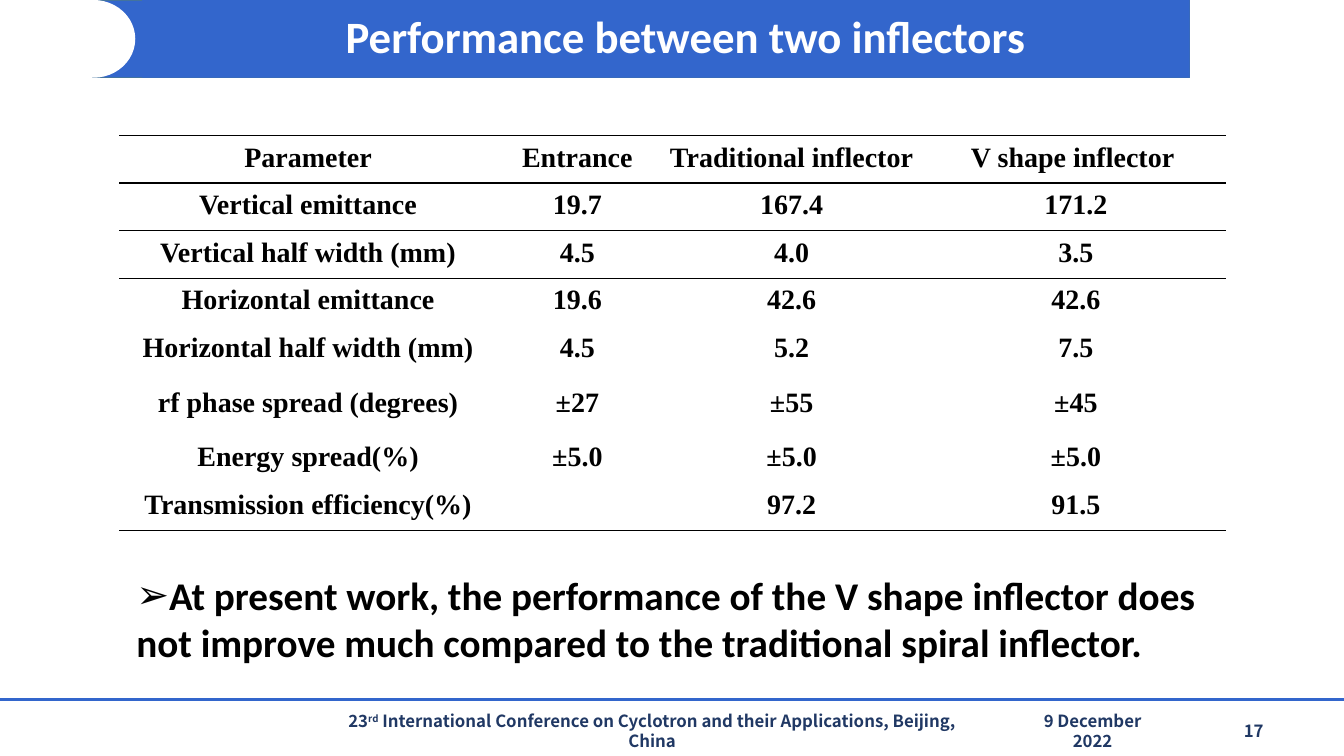
import dataclasses
import typing

import pptx
import pptx.dml.color
import pptx.enum.shapes
import pptx.enum.text
import pptx.oxml
import pptx.oxml.ns
import pptx.util
from lxml import etree

Cm = pptx.util.Cm
Pt = pptx.util.Pt
Rgb = pptx.dml.color.RGBColor
Forms = pptx.enum.shapes.MSO_SHAPE
CENTER = pptx.enum.text.PP_ALIGN.CENTER
MIDDLE = pptx.enum.text.MSO_ANCHOR.MIDDLE
qn = pptx.oxml.ns.qn


@dataclasses.dataclass(frozen=True)
class Face:
    name: str
    size: float
    color: str


@dataclasses.dataclass(frozen=True)
class Theme:
    blue: str = "3366CC"
    edge: str = "43739E"
    white: str = "FFFFFF"
    black: str = "000000"
    title: Face = Face("Calibri", 32, "FFFFFF")
    body: Face = Face("Calibri", 28, "000000")
    table: Face = Face("Times New Roman", 20, "000000")
    foot: Face = Face("Noto Sans CJK SC", 12, "203864")


class Box(typing.NamedTuple):
    left: float
    top: float
    width: float
    height: float

    def lengths(self) -> list:
        return [Cm(side) for side in self]


class Block(typing.NamedTuple):
    form: Forms
    box: Box
    fill: str
    edge: typing.Optional[str]


class Note(typing.NamedTuple):
    left: float
    width: float
    runs: tuple


THEME = Theme()
HEAD = 1.96
PLAIN = "{2D5ABB26-0587-4C30-8999-92F81FD0307C}"
BLOCKS = (
    Block(Forms.RECTANGLE, Box(2.34, 0, 27.64, HEAD), THEME.blue, THEME.edge),
    Block(Forms.OVAL, Box(1.3, 0, 2.11, HEAD), THEME.white, None),
)
# Each run is a text and its baseline shift
NOTES = (
    Note(25.53, 4.01, (("9 December 2022", 0),)),
    Note(8.28, 16.31, (
        ("23", 0), ("rd", 30000),
        (" International Conference on Cyclotron and their Applications, Beijing, China", 0),
    )),
    Note(30.45, 2.29, (("17", 0),)),
)
ROWS = (
    ("Parameter", "Entrance", "Traditional inflector", "V shape inflector "),
    ("Vertical emittance", "19.7", "167.4", "171.2"),
    ("Vertical half width (mm)", "4.5", "4.0", "3.5"),
    ("Horizontal emittance", "19.6", "42.6", "42.6"),
    ("Horizontal half width (mm)", "4.5", "5.2", "7.5"),
    ("rf phase spread (degrees)", "±27", "±55", "±45"),
    ("Energy spread(%)", "±5.0", "±5.0", "±5.0"),
    ("Transmission efficiency(%)", "", "97.2", "91.5"),
)
WIDTHS = (9.53, 4.04, 6.76, 7.57)
HEIGHTS = (2.44, 1.2, 1.2, 1.2, 1.2, 1.2, 1.55, 1.2, 1.2)
RULED = {0, 1, 2, 8}


def apply(target: typing.Any, values: dict) -> None:
    for name, value in values.items():
        setattr(target, name, value)


def style(font: typing.Any, face: Face) -> None:
    apply(font, {"name": face.name, "size": Pt(face.size), "bold": True})
    font.color.rgb = Rgb.from_string(face.color)


def place(shape: typing.Any, box: Box) -> None:
    apply(shape, dict(zip(("left", "top", "width", "height"), box.lengths())))


def paint(shape: typing.Any, color: str) -> None:
    shape.fill.solid()
    shape.fill.fore_color.rgb = Rgb.from_string(color)


def draw_block(slide: typing.Any, block: Block) -> None:
    shape = slide.shapes.add_shape(block.form, *block.box.lengths())
    shape.shadow.inherit = False
    paint(shape, block.fill)
    if block.edge:
        shape.line.color.rgb = Rgb.from_string(block.edge)
        shape.line.width = Pt(1)
    else:
        shape.line.fill.background()


def draw_rule(slide: typing.Any) -> None:
    rule = slide.shapes.add_connector(
        pptx.enum.shapes.MSO_CONNECTOR.STRAIGHT, 0, Cm(17.63), Cm(33.87), Cm(17.63))
    rule.line.color.rgb = Rgb.from_string(THEME.blue)
    rule.line.width = Pt(1.75)
    etree.SubElement(rule._element.spPr, qn("a:effectLst"))


def draw_note(slide: typing.Any, note: Note) -> None:
    box = Box(note.left, 17.91, note.width, 1.02)
    frame = slide.shapes.add_textbox(*box.lengths()).text_frame
    apply(frame, {"word_wrap": True, "vertical_anchor": MIDDLE})
    line = frame.paragraphs[0]
    line.alignment = CENTER
    for text, shift in note.runs:
        run = line.add_run()
        run.text = text
        style(run.font, THEME.foot)
        if shift:
            run.font._element.set("baseline", str(shift))


def draw_title(slide: typing.Any) -> None:
    title = slide.shapes.title
    place(title, Box(3.58, 0, 26.4, HEAD))
    paint(title, THEME.blue)
    frame = title.text_frame
    frame.text = "Performance between two inflectors"
    apply(frame, {"vertical_anchor": MIDDLE, "word_wrap": True,
                  "auto_size": pptx.enum.text.MSO_AUTO_SIZE.NONE})
    line = frame.paragraphs[0]
    apply(line, {"alignment": CENTER, "line_spacing": 0.9})
    line._p.get_or_add_pPr().set("marL", str(Cm(1)))
    style(line.runs[0].font, THEME.title)
    # Bring the title above the band
    slide.shapes._spTree.append(title._element)


def draw_body(slide: typing.Any) -> None:
    body = slide.placeholders[1]
    place(body, Box(3.18, 14.27, 27.58, 2.64))
    frame = body.text_frame
    frame.text = ("At present work, the performance of the V shape inflector does not "
                  "improve much compared to the traditional spiral inflector.")
    apply(frame, {"word_wrap": True,
                  "auto_size": pptx.enum.text.MSO_AUTO_SIZE.SHAPE_TO_FIT_TEXT})
    line = frame.paragraphs[0]
    line.space_before = Pt(0)
    props = line._p.get_or_add_pPr()
    apply_xml = {"marL": "0", "indent": "0"}
    for key, value in apply_xml.items():
        props.set(key, value)
    etree.SubElement(props, qn("a:buChar")).set("char", "➢")
    style(line.runs[0].font, THEME.body)


def border(cell: typing.Any, side: str) -> None:
    line = etree.SubElement(cell._tc.get_or_add_tcPr(), qn(f"a:{side}"), w=str(Pt(1)))
    fill = etree.SubElement(line, qn("a:solidFill"))
    etree.SubElement(fill, qn("a:srgbClr"), val=THEME.black)


def draw_table(slide: typing.Any) -> None:
    box = Box(3, 0.97, sum(WIDTHS), sum(HEIGHTS))
    table = slide.shapes.add_table(len(HEIGHTS), len(WIDTHS), *box.lengths()).table
    apply(table, {"first_row": False, "horz_banding": False})
    table._tbl.tblPr.find(qn("a:tableStyleId")).text = PLAIN
    for column, width in zip(table.columns, WIDTHS):
        column.width = Cm(width)
    for row, height in zip(table.rows, HEIGHTS):
        row.height = Cm(height)
    # The top row is one empty cell over all columns
    table.cell(0, 0).merge(table.cell(0, len(WIDTHS) - 1))
    for down, texts in enumerate((("",) * len(WIDTHS),) + ROWS):
        for across, text in enumerate(texts):
            cell = table.cell(down, across)
            if down - 1 in RULED:
                border(cell, "lnT")
            if down in RULED:
                border(cell, "lnB")
            cell.fill.background()
            cell.vertical_anchor = MIDDLE
            if text:
                cell.text = text
                line = cell.text_frame.paragraphs[0]
                apply(line, {"alignment": CENTER, "line_spacing": Pt(20)})
                style(line.runs[0].font, THEME.table)


def main() -> None:
    deck = pptx.Presentation()
    apply(deck, {"slide_width": Cm(33.87), "slide_height": Cm(19.05)})
    slide = deck.slides.add_slide(deck.slide_layouts[1])
    # Header band and footer
    for block in BLOCKS:
        draw_block(slide, block)
    draw_rule(slide)
    for note in NOTES:
        draw_note(slide, note)
    # Content
    draw_title(slide)
    draw_table(slide)
    draw_body(slide)
    deck.save("out.pptx")


if __name__ == "__main__":
    main()
